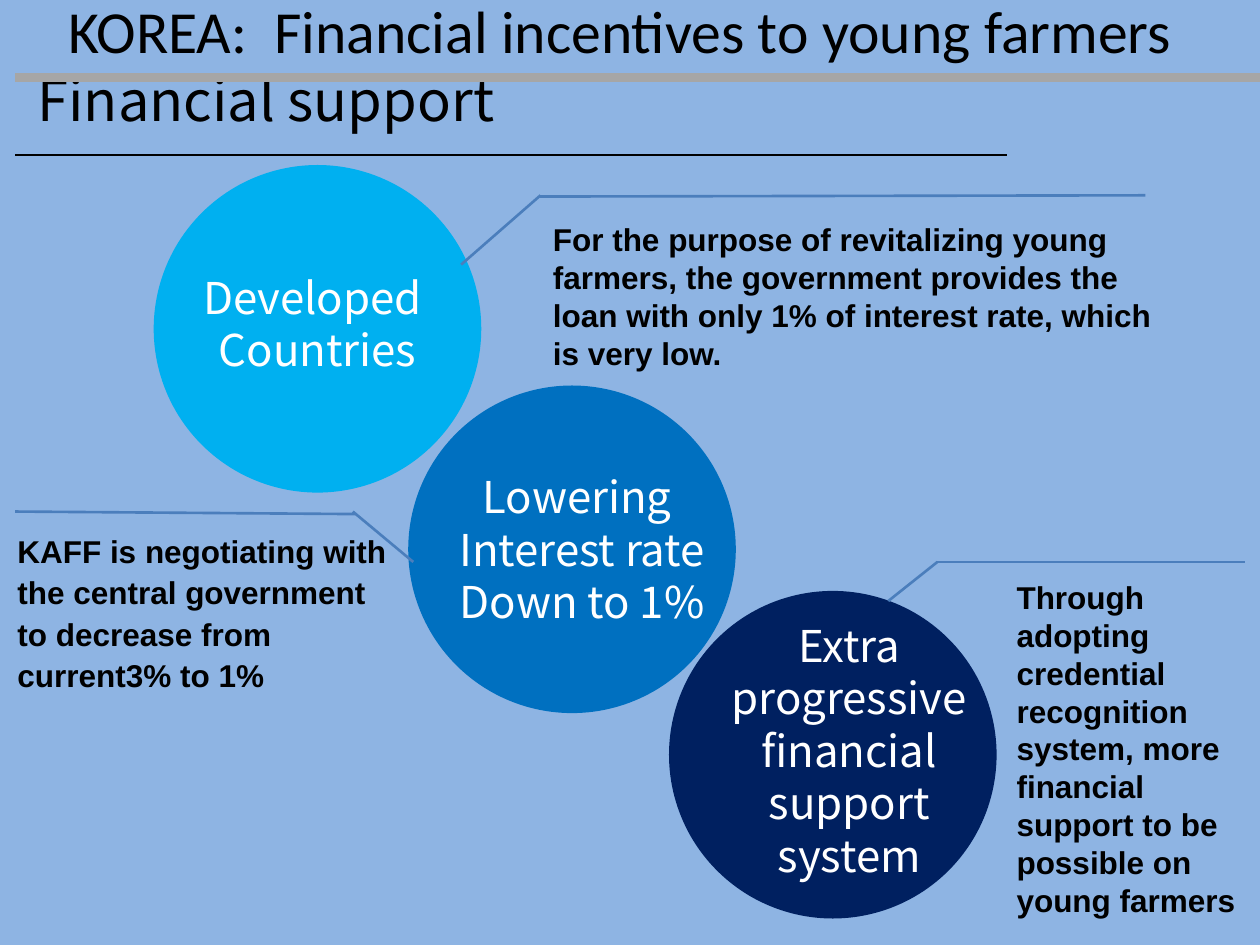
from pptx import Presentation
from pptx.dml.color import RGBColor
from pptx.enum.shapes import MSO_CONNECTOR as Connector, MSO_SHAPE as Shape
from pptx.enum.text import MSO_ANCHOR as Anchor, PP_ALIGN as Align
from pptx.oxml.ns import qn
from pptx.util import Inches, Pt
from lxml.etree import SubElement

BACKGROUND = RGBColor(0x8E, 0xB4, 0xE3)
GREY = RGBColor(0xA6, 0xA6, 0xA6)
BLACK = RGBColor(0, 0, 0)
WHITE = RGBColor(0xFF, 0xFF, 0xFF)
CALLOUT_BLUE = RGBColor(0x4B, 0x7E, 0xBC)
SKY = RGBColor(0x00, 0xB0, 0xF0)
BLUE = RGBColor(0x00, 0x70, 0xC0)
NAVY = RGBColor(0x00, 0x20, 0x60)

WIDTH, HEIGHT = 10, 7.5
MARGIN = 0.12
DIAMETER = 2.6

# Content: positions are left, top, width, height in inches
TITLE = "KOREA:  Financial incentives to young farmers"
SUBTITLE = "Financial support"

STAGES = [  # circle left and top, colour, label box, label lines
    ((1.22, 1.31), SKY, (1.38, 2.1, 2.28, 0.94), ["Developed ", "Countries"]),
    ((3.24, 3.06), BLUE, (3.28, 3.68, 2.68, 1.36),
     ["Lowering ", "Interest rate", "Down to 1%"]),
    ((5.31, 4.69), NAVY, (5.57, 4.86, 2.34, 2.2),
     ["Extra progressive financial support system"]),
]

CALLOUTS = [  # leader segments, text box, line spacing, paragraphs
    ([((3.66, 2.1), (4.29, 1.55)), ((4.28, 1.56), (9.09, 1.55))],
     (4.29, 1.7, 5.2, 1.31), None,
     ["For the purpose of revitalizing young farmers, the government "
      "provides the loan with only 1% of interest rate, which is very low."]),
    ([((3.28, 4.46), (2.8, 4.06)), ((MARGIN, 4.06), (2.82, 4.08))],
     (0.04, 4.14, 3.2, 1.43), 1.1,
     ["KAFF is negotiating with the central government",
      "to decrease from current3% to 1%"]),
    ([((7.05, 4.77), (7.44, 4.46)), ((7.44, 4.46), (9.88, 4.46))],
     (7.97, 4.54, 2.03, 2.83), None,
     ["Through adopting credential recognition system, more financial "
      "support to be possible on young farmers"]),
]

prs = Presentation()
prs.slide_width, prs.slide_height = Inches(WIDTH), Inches(HEIGHT)
slide = prs.slides.add_slide(prs.slide_layouts[6])
slide.background.fill.solid()
slide.background.fill.fore_color.rgb = BACKGROUND


def add_text(box, lines, size, font="Noto Sans CJK KR", color=BLACK, bold=False,
             align=Align.LEFT, anchor=Anchor.TOP, spacing=None):
    frame = slide.shapes.add_textbox(*map(Inches, box)).text_frame
    frame.word_wrap = True
    frame.vertical_anchor = anchor
    for index, line in enumerate(lines):
        paragraph = frame.add_paragraph() if index else frame.paragraphs[0]
        paragraph.alignment = align
        if spacing:
            paragraph.line_spacing = spacing
        run = paragraph.add_run()
        run.text = line
        run.font.size, run.font.name, run.font.bold = Pt(size), font, bold
        run.font.color.rgb = color


def add_solid(kind, box, color):
    solid = slide.shapes.add_shape(kind, *map(Inches, box))
    solid.shadow.inherit = False
    solid.fill.solid()
    solid.fill.fore_color.rgb = color
    solid.line.fill.background()


def add_line(start, end, color, width):
    line = slide.shapes.add_connector(
        Connector.STRAIGHT, *map(Inches, (*start, *end)))
    line.line.color.rgb = color
    line.line.width = Pt(width)
    SubElement(line._element.spPr, qn("a:effectLst"))


# Heading: the grey bar lies over the top of the subtitle
add_text((0.2, 0.47, 8.11, 0.64), [SUBTITLE], 32)
add_solid(Shape.RECTANGLE, (MARGIN, 0.58, WIDTH - MARGIN, 0.07), GREY)
add_line((MARGIN, 1.23), (7.99, 1.23), BLACK, 0.75)
add_text((0.42, 0, 9, 0.58), [TITLE], 34.1, font="Calibri",
         align=Align.CENTER, anchor=Anchor.MIDDLE, spacing=0.8)

# Circles
for corner, color, _, _ in STAGES:
    add_solid(Shape.OVAL, (*corner, DIAMETER, DIAMETER), color)

# Callouts with their leader lines
for segments, box, spacing, lines in CALLOUTS:
    for start, end in segments:
        add_line(start, end, CALLOUT_BLUE, 1.5)
    add_text(box, lines, 18, font="Arial", bold=True, spacing=spacing)

# Circle labels
for _, _, box, lines in STAGES:
    add_text(box, lines, 25, color=WHITE, align=Align.CENTER)

prs.save("out.pptx")
